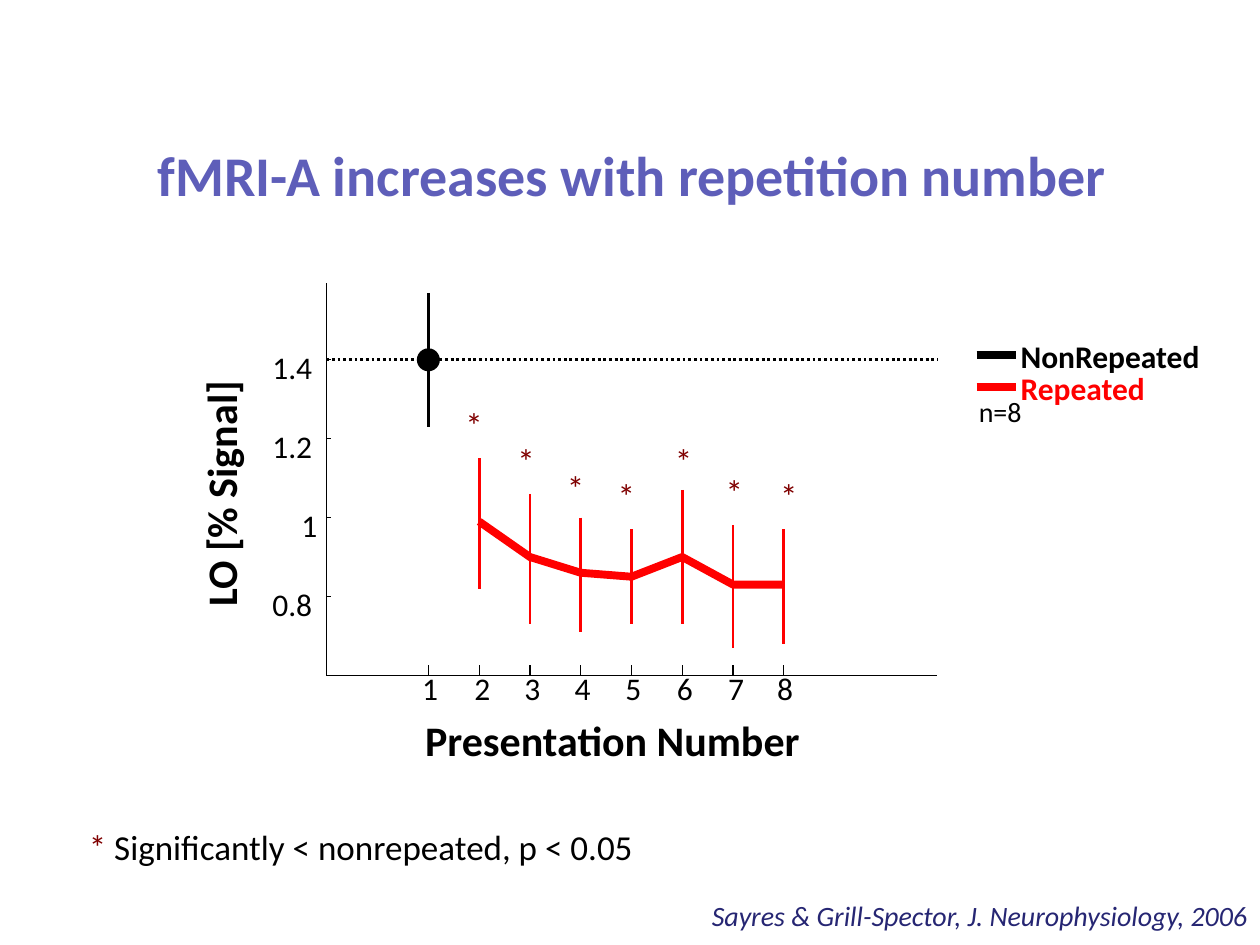
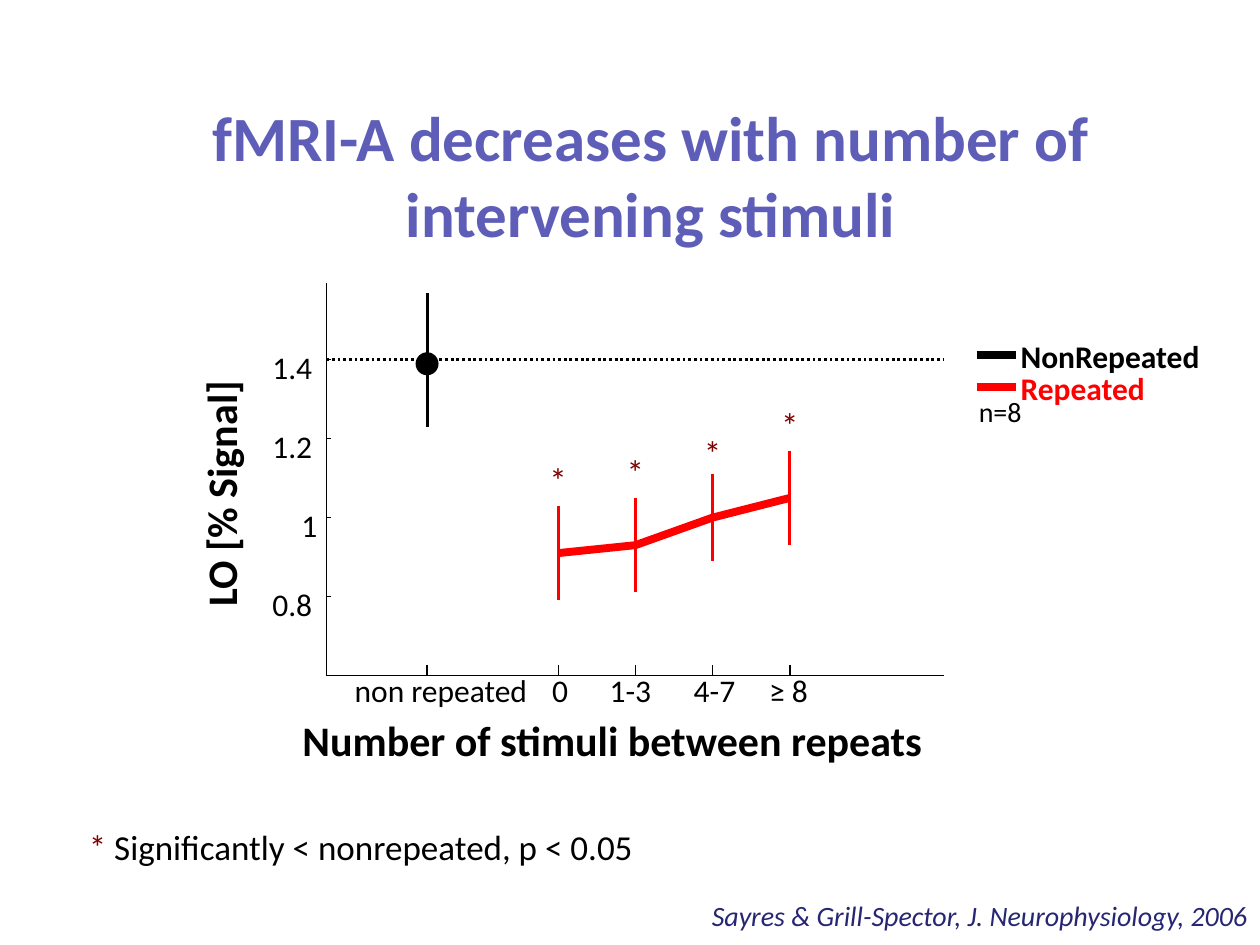
from dataclasses import dataclass
from lxml import etree
from pptx import Presentation
from pptx.dml.color import RGBColor
from pptx.enum.dml import MSO_LINE
from pptx.enum.shapes import MSO_CONNECTOR, MSO_SHAPE
from pptx.enum.text import MSO_ANCHOR, PP_ALIGN
from pptx.oxml.ns import qn
from pptx.util import Inches, Pt

STRAIGHT, OVAL = MSO_CONNECTOR.STRAIGHT, MSO_SHAPE.OVAL
LEFT, CENTER, RIGHT = PP_ALIGN.LEFT, PP_ALIGN.CENTER, PP_ALIGN.RIGHT
MIDDLE = MSO_ANCHOR.MIDDLE
DOTTED = MSO_LINE.ROUND_DOT


@dataclass(frozen=True)
class Theme:
    font: str = "Calibri"
    title: str = "5E5EB9"
    ink: str = "000000"
    repeated: str = "FF0000"
    star: str = "800000"
    citation: str = "262673"
    axis_title: int = 24
    note: int = 20
    label: int = 18
    small: int = 16
    thin: float = 0.75
    bar: float = 1.62
    thick: float = 4.5


T = Theme()

# The slide is a grid of 100 columns by 75 rows
COLS, ROWS = 100, 75
CELL = Inches(10) // COLS

# Plot frame on that grid, and rows per unit of signal
AXIS_LEFT, AXIS_TOP, AXIS_BOTTOM = 25.9, 22.5, 53.6
SIGNAL_MIN, ROWS_PER_UNIT = 0.6, 31.3
BASELINE = 1.4
Y_TICKS = [(0.8, "0.8", 23.2), (1, "1", 24.55), (1.2, "1.2", 23.2), (1.4, "1.4", 23.2)]


@dataclass(frozen=True)
class Point:
    """One condition: signal mean, error bar ends and star height."""
    label: str
    mean: float
    high: float
    low: float
    star: float = 0
    star_shift: float = 0
    label_shift: float = 0.15
    label_width: float = 4


BY_REPETITION = [
    Point("1", 1.4, 1.57, 1.23),
    Point("2", 0.99, 1.15, 0.82, 1.23, -0.4, 0.25),
    Point("3", 0.9, 1.06, 0.73, 1.14, -0.3, 0.2),
    Point("4", 0.86, 1, 0.71, 1.07, -0.4),
    Point("5", 0.85, 0.97, 0.73, 1.05, -0.4),
    Point("6", 0.9, 1.07, 0.73, 1.14, 0.1, 0.2),
    Point("7", 0.83, 0.98, 0.67, 1.06, 0.1, 0.25),
    Point("8", 0.83, 0.97, 0.68, 1.05, 0.4, 0.1),
]
BY_INTERVENING = [
    Point("non repeated", 1.39, 1.57, 1.23, label_shift=1.1, label_width=16.4),
    Point("0", 0.91, 1.03, 0.79, 1.09),
    Point("1-3", 0.93, 1.05, 0.81, 1.11, label_shift=-0.4),
    Point("4-7", 1, 1.11, 0.89, 1.16),
    Point("≥ 8", 1.05, 1.17, 0.93, 1.23, label_shift=-0.1),
]


def grid(n):
    return round(n * CELL)


def row_of(signal):
    return AXIS_BOTTOM - (signal - SIGNAL_MIN) * ROWS_PER_UNIT


def color(value):
    return RGBColor.from_string(value)


def add_text(shapes, text, left, top, width, height, *, size=T.label, ink=T.ink,
             bold=False, italic=False, align=CENTER, spacing=None, wrap=False,
             rotation=0):
    """Text is a string or a list of (string, colour) runs."""
    sp = shapes.add_textbox(*map(grid, (left, top, width, height)))
    sp.rotation = rotation
    tf = sp.text_frame
    tf.word_wrap = wrap
    tf.vertical_anchor = MIDDLE
    if not wrap:
        tf.margin_left = tf.margin_right = tf.margin_top = tf.margin_bottom = 0
    p = tf.paragraphs[0]
    p.alignment = align
    p.line_spacing = spacing
    for words, run_ink in [(text, ink)] if isinstance(text, str) else text:
        r = p.add_run()
        r.text = words
        r.font.name = T.font
        r.font.size = Pt(size)
        r.font.bold, r.font.italic = bold, italic
        r.font.color.rgb = color(run_ink)


def add_label(shapes, text, x, y, width=4, height=2.9, **style):
    """Compact text centred on a point of the grid."""
    add_text(shapes, text, x - width / 2, y - height / 2, width, height,
             spacing=0.93, **style)


def add_line(shapes, x1, y1, x2, y2, ink=T.ink, weight=T.thin, dash=None):
    ln = shapes.add_connector(STRAIGHT, *map(grid, (x1, y1, x2, y2)))
    ln.line.color.rgb = color(ink)
    ln.line.width = Pt(weight)
    if dash:
        ln.line.dash_style = dash
    etree.SubElement(ln._element.spPr, qn("a:effectLst"))


def add_curve(shapes, points):
    corners = [(grid(x), grid(y)) for x, y in points]
    builder = shapes.build_freeform(*corners[0])
    builder.add_line_segments(corners[1:], close=False)
    sp = builder.convert_to_shape()
    sp.shadow.inherit = False
    sp.fill.background()
    sp.line.color.rgb = color(T.repeated)
    sp.line.width = Pt(T.thick)


def add_dot(shapes, x, y, size=1.6):
    sp = shapes.add_shape(OVAL, *map(grid, (x - size / 2, y - size / 2, size, size)))
    sp.shadow.inherit = False
    sp.fill.solid()
    sp.fill.fore_color.rgb = color(T.ink)
    sp.line.color.rgb = color(T.ink)
    sp.line.width = Pt(T.bar)


def add_axes(shapes, right, label_row, columns, points):
    add_line(shapes, AXIS_LEFT, AXIS_BOTTOM, AXIS_LEFT, AXIS_TOP)
    add_line(shapes, AXIS_LEFT, AXIS_BOTTOM, right, AXIS_BOTTOM)
    add_line(shapes, AXIS_LEFT, row_of(BASELINE), right, row_of(BASELINE),
             weight=T.bar, dash=DOTTED)
    for signal, text, x in Y_TICKS:
        y = row_of(signal)
        add_line(shapes, AXIS_LEFT, y, AXIS_LEFT + 0.4, y)
        add_label(shapes, text, x, y + 0.75)
    for x, point in zip(columns, points):
        add_line(shapes, x, AXIS_BOTTOM, x, AXIS_BOTTOM - 0.8)
        add_label(shapes, point.label, x + point.label_shift, label_row,
                  width=point.label_width)


def add_signal(shapes, columns, points):
    """Error bars, the repeated curve with its stars, and the nonrepeated dot."""
    for i, (x, point) in enumerate(zip(columns, points)):
        add_line(shapes, x, row_of(point.high), x, row_of(point.low),
                 T.repeated if i else T.ink, T.bar)
        if point.star:
            add_label(shapes, "*", x + point.star_shift, row_of(point.star),
                      width=1.4, height=3.2, size=T.note, ink=T.star)
    means = [(x, row_of(point.mean)) for x, point in zip(columns, points)]
    add_curve(shapes, means[1:])
    add_dot(shapes, *means[0])


def add_legend(shapes):
    group = shapes.add_group_shape().shapes
    for text, ink, width, top in (("NonRepeated", T.ink, 14.7, 26.7),
                                  ("Repeated", T.repeated, 10.2, 29.2)):
        add_text(group, text, 81, top, width, 3.1, ink=ink, bold=True, align=LEFT)
        add_line(group, 77.5, top + 1.5, 80.6, top + 1.5, ink, T.thick)
    add_text(shapes, "n=8", 76.7, 30.8, 5.8, 3.7, size=T.small, align=LEFT, wrap=True)


def add_notes_below(shapes):
    add_label(shapes, [("* ", T.star), ("Significantly < nonrepeated, p < 0.05", T.ink)],
              28.65, 67.4, width=43.7, height=3.2, size=T.note)
    add_text(shapes, "Sayres & Grill-Spector, J. Neurophysiology, 2006",
             46.7, 70.8, 53.3, 3.7, size=T.small, ink=T.citation, italic=True,
             align=RIGHT, wrap=True)


def add_plot_slide(prs, title, title_box, title_size, x_title, columns, points,
                   right, label_row):
    shapes = prs.slides.add_slide(prs.slide_layouts[6]).shapes
    add_text(shapes, title, *title_box, size=title_size, ink=T.title, bold=True,
             wrap=True)
    # Plot
    add_axes(shapes, right, label_row, columns, points)
    add_signal(shapes, columns, points)
    # Axis titles
    add_label(shapes, x_title, 48.6, 58.9, width=49.8, height=3.8,
              size=T.axis_title, bold=True)
    add_label(shapes, "LO [% Signal]", 17.7, 39.2, width=18.2, height=3.8,
              size=T.axis_title, bold=True, rotation=270)
    # Legend and notes
    add_legend(shapes)
    add_notes_below(shapes)


def main():
    prs = Presentation()
    prs.slide_width, prs.slide_height = grid(COLS), grid(ROWS)

    add_plot_slide(prs, "fMRI-A increases with repetition number",
                   (0.2, 10.6, 100, 6.4), 32, "Presentation Number",
                   [34 + 4.03 * i for i in range(len(BY_REPETITION))],
                   BY_REPETITION, right=74.4, label_row=54.75)
    add_plot_slide(prs, "fMRI-A decreases with number of intervening stimuli",
                   (7.5, 7.3, 88.3, 13.1), 36, "Number of stimuli between repeats",
                   [33.9] + [44.3 + 6.13 * i for i in range(len(BY_INTERVENING) - 1)],
                   BY_INTERVENING, right=74.9, label_row=54.95)
    prs.save("out.pptx")


if __name__ == "__main__":
    main()
